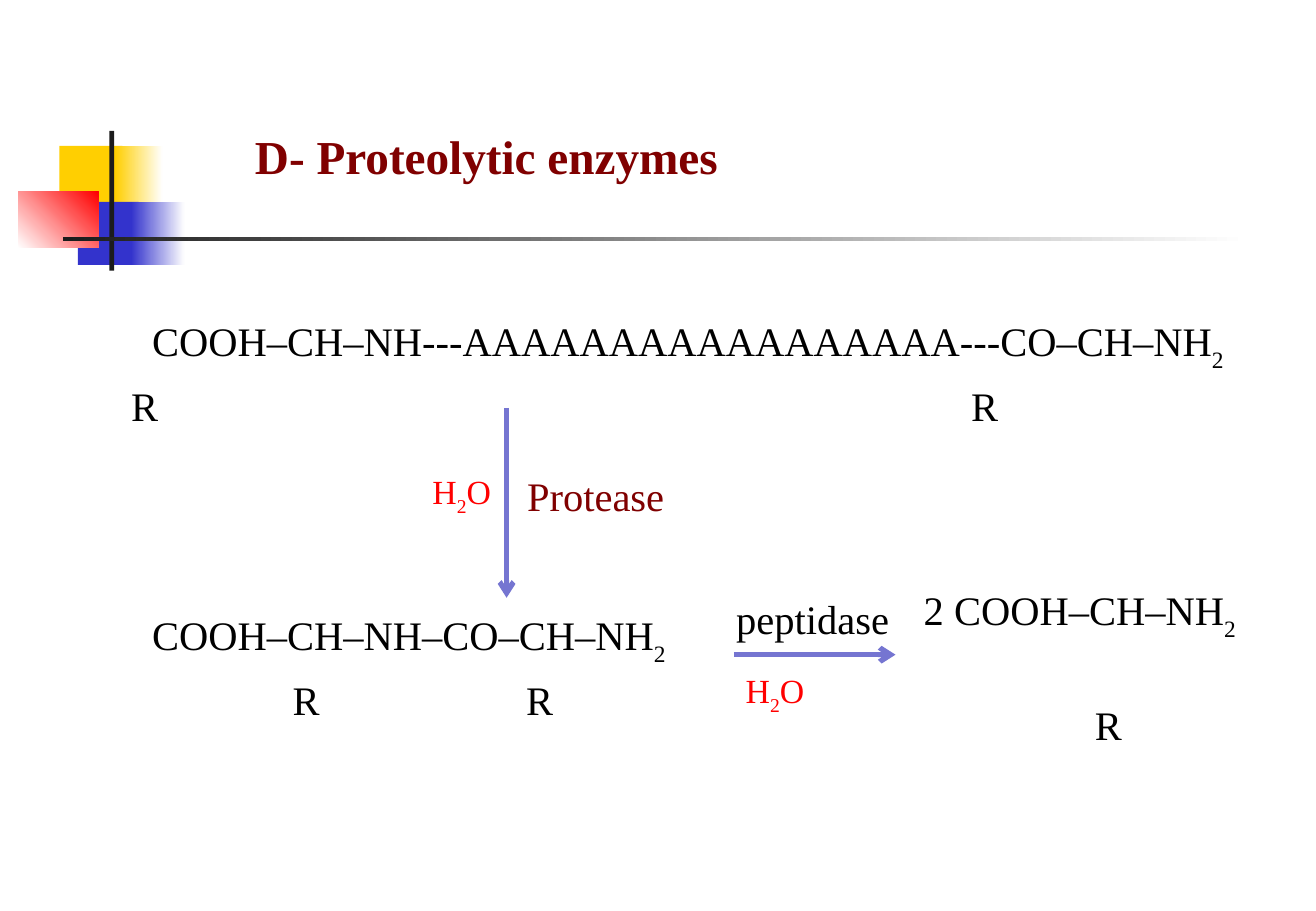
from pptx import Presentation
from pptx.dml.color import RGBColor
from pptx.enum.shapes import MSO_CONNECTOR as Connector, MSO_SHAPE as Shape
from pptx.enum.text import MSO_ANCHOR as Anchor
from pptx.oxml.ns import qn
from pptx.util import Cm, Pt
from lxml.etree import SubElement

COLOURS = {
    "yellow": "FFCF01", "blue": "3333CC", "red": "FF0000", "ink": "1C1C1C",
    "white": "FFFFFF", "maroon": "800000", "black": "000000", "arrow": "7575D1",
}


def colour(name):
    return RGBColor.from_string(COLOURS[name])


class ReactionPage:
    font = "Times New Roman"

    def __init__(self, deck):
        self.shapes = deck.slides.add_slide(deck.slide_layouts[6]).shapes

    def block(self, place, start, end=None, angle=0):
        """Add a rectangle, plain or fading from start to end."""
        box = self.shapes.add_shape(Shape.RECTANGLE, *map(Cm, place))
        box.shadow.inherit = False
        box.line.fill.background()
        if end is None:
            box.fill.solid()
            box.fill.fore_color.rgb = colour(start)
            return
        box.fill.gradient()
        box.fill.gradient_angle = angle
        for stop, name in zip(box.fill.gradient_stops, (start, end)):
            stop.color.rgb = colour(name)

    def frame(self, place, anchor=Anchor.TOP, wrap=True):
        text_frame = self.shapes.add_textbox(*map(Cm, place)).text_frame
        text_frame.word_wrap = wrap
        text_frame.vertical_anchor = anchor
        return text_frame

    def add_spans(self, para, text, size, tint, drop=-30, bold=False):
        """Fill a paragraph; every second piece between underscores is a subscript."""
        for index, piece in enumerate(text.split("_")):
            span = para.add_run()
            span.text = piece
            span.font.name = self.font
            span.font.size = Pt(size)
            span.font.bold = bold
            span.font.color.rgb = colour(tint)
            if index % 2:
                span.font._element.set("baseline", str(drop * 1000))

    def title(self, place, text):
        para = self.frame(place, Anchor.MIDDLE).paragraphs[0]
        self.add_spans(para, text, 28, "maroon", bold=True)

    def label(self, place, text, size, tint):
        para = self.frame(place, wrap=False).paragraphs[0]
        self.add_spans(para, text, size, tint, drop=-25)

    def formula(self, place, text, side_chains, gap=5):
        """Add a formula with an R below it at each tab position."""
        text_frame = self.frame(place, Anchor.MIDDLE)
        text_frame.margin_left = Cm(2.54)
        text_frame.margin_top = text_frame.margin_bottom = Cm(0.2)
        chain = text_frame.paragraphs[0]
        chain._p.get_or_add_pPr().set("indent", str(Cm(0.64)))
        self.add_spans(chain, text, 24, "black")
        radicals = text_frame.add_paragraph()
        radicals.space_before = Pt(gap)
        tabs = SubElement(radicals._p.get_or_add_pPr(), qn("a:tabLst"))
        for position in side_chains:
            SubElement(tabs, qn("a:tab"), pos=str(Cm(position)), algn="l")
        self.add_spans(radicals, "\tR" * len(side_chains), 24, "black")

    def arrow(self, *ends):
        line = self.shapes.add_connector(Connector.STRAIGHT, *map(Cm, ends))
        line.line.color.rgb = colour("arrow")
        line.line.width = Pt(3)
        SubElement(line.line._get_or_add_ln(), qn("a:tailEnd"), type="arrow")
        SubElement(line._element.spPr, qn("a:effectLst"))


def main():
    deck = Presentation()
    deck.slide_width, deck.slide_height = Cm(27.51), Cm(19.05)
    page = ReactionPage(deck)

    page.block((1.24, 3.05, 1.32, 1.32), "yellow")
    page.block((2.41, 3.05, 0.99, 1.32), "yellow", "white")
    page.block((1.63, 4.22, 1.27, 1.32), "blue")
    page.block((2.74, 4.22, 1.12, 1.32), "blue", "white")
    page.block((0.38, 4.01, 1.68, 1.17), "white", "red", angle=45)
    page.block((2.29, 2.74, 0.1, 2.92), "ink")
    page.block((1.32, 4.95, 24.77, 0.09), "ink", "white")
    page.title((5.08, 2.54, 21.39, 1.45), "D- Proteolytic enzymes")

    page.formula((0, 6.55, 27.51, 2.49),
                 "COOH–CH–NH---AAAAAAAAAAAAAAAAA---CO–CH–NH_2", (0.2, 17.76))
    page.label((10.77, 9.73, 3.4, 1.3), "Protease", 24, "maroon")
    page.label((8.79, 9.73, 1.78, 1.12), "H_2_O", 20, "red")
    page.arrow(10.59, 8.53, 10.59, 12.5)

    page.formula((0, 12.7, 15.34, 2.49), "COOH–CH–NH–CO–CH–NH_2", (3.58, 8.46))
    page.label((15.14, 12.29, 3.71, 1.27), "peptidase", 24, "black")
    page.label((15.34, 13.89, 1.78, 1.12), "H_2_O", 20, "red")
    page.arrow(15.34, 13.69, 18.72, 13.69)
    page.formula((16.13, 12.7, 11.38, 2.49), "2 COOH–CH–NH_2", (4.22,), gap=34)

    deck.save("out.pptx")


if __name__ == "__main__":
    main()
